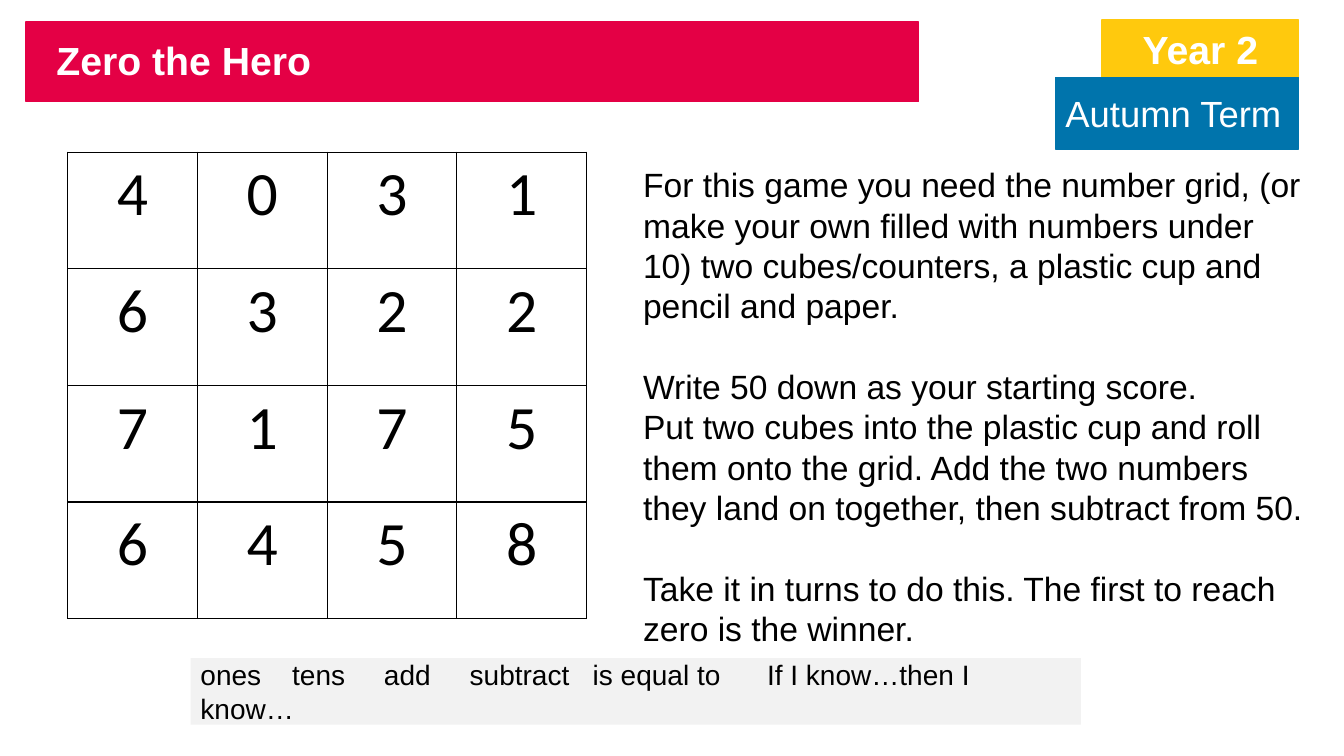
from dataclasses import dataclass
from typing import Optional

from lxml import etree
from pptx import Presentation
from pptx.dml.color import RGBColor
from pptx.enum.shapes import MSO_SHAPE
from pptx.enum.text import MSO_ANCHOR, MSO_AUTO_SIZE, PP_ALIGN
from pptx.oxml.ns import qn
from pptx.util import Inches, Pt

RECTANGLE = MSO_SHAPE.RECTANGLE
TOP, MIDDLE = MSO_ANCHOR.TOP, MSO_ANCHOR.MIDDLE
LEFT, CENTER = PP_ALIGN.LEFT, PP_ALIGN.CENTER
NO_AUTOFIT = MSO_AUTO_SIZE.NONE

RED = RGBColor(0xE4, 0x00, 0x45)
YELLOW = RGBColor(0xFF, 0xC9, 0x0D)
BLUE = RGBColor(0x00, 0x74, 0xAC)
GREY = RGBColor(0xF2, 0xF2, 0xF2)
WHITE = RGBColor(0xFF, 0xFF, 0xFF)
BLACK = RGBColor(0x00, 0x00, 0x00)

SLIDE_WIDTH, SLIDE_HEIGHT = Inches(13.33), Inches(7.5)


@dataclass(frozen=True)
class Area:
    """A place on the slide, in percent of its width and height."""
    left: float
    top: float
    width: float
    height: float

    def box(self) -> tuple[int, int, int, int]:
        return (round(SLIDE_WIDTH * self.left / 100), round(SLIDE_HEIGHT * self.top / 100),
                round(SLIDE_WIDTH * self.width / 100), round(SLIDE_HEIGHT * self.height / 100))


@dataclass(frozen=True)
class Style:
    size: int
    color: RGBColor = BLACK
    bold: bool = False
    align: PP_ALIGN = LEFT
    anchor: MSO_ANCHOR = TOP
    font: str = "Arial"


@dataclass(frozen=True)
class Panel:
    area: Area
    fill: RGBColor
    outlined: bool = True
    text: str = ""
    style: Optional[Style] = None


TITLE_AREA = Area(3.45, 4.13, 21.53, 7.6)
GRID_AREA = Area(5.03, 20.13, 38.63, 61.73)
RULES_AREA = Area(47.11, 21.07, 51.16, 66)

BANNER = Panel(Area(1.95, 2.93, 66.4, 10.53), RED)
VOCABULARY = Panel(Area(14.18, 87.07, 66.24, 8.8), GREY, False,
                   "ones\ttens\tadd\tsubtract\tis equal to\tIf I know…then I know…",
                   Style(20, anchor=MIDDLE))
YEAR = Panel(Area(82, 2.67, 14.63, 7.6), YELLOW, True, "Year 2",
             Style(28, WHITE, bold=True, align=CENTER))
TERM = Panel(Area(78.54, 10.27, 18.08, 9.47), BLUE, True, "Autumn Term",
             Style(26, WHITE, anchor=MIDDLE))

WORD_STOPS = (0.91, 1.82, 2.67, 3.89, 5.62)
NUMBERS = ("4031", "6322", "7175", "6458")

# Each rule with the gap above it in points
RULES = (
    ("For this game you need the number grid, (or make your own filled with numbers "
     "under 10) two cubes/counters, a plastic cup and pencil and paper.", 0),
    ("Write 50 down as your starting score.", 28.8),
    ("Put two cubes into the plastic cup and roll them onto the grid. Add the two "
     "numbers they land on together, then subtract from 50.", 0),
    ("Take it in turns to do this. The first to reach zero is the winner.", 28.8),
)


def write(frame, text: str, style: Style, wrap: bool = True) -> None:
    for name, value in {"text": text, "word_wrap": wrap, "auto_size": NO_AUTOFIT,
                        "vertical_anchor": style.anchor}.items():
        setattr(frame, name, value)
    for paragraph in frame.paragraphs:
        format_paragraph(paragraph, style)


def format_paragraph(paragraph, style: Style) -> None:
    paragraph.alignment = style.align
    for run in paragraph.runs:
        for name, value in {"name": style.font, "size": Pt(style.size),
                            "bold": style.bold}.items():
            setattr(run.font, name, value)
        run.font.color.rgb = style.color


def draw_panel(slide, panel: Panel):
    shape = slide.shapes.add_shape(RECTANGLE, *panel.area.box())
    shape.shadow.inherit = False
    shape.fill.solid()
    shape.fill.fore_color.rgb = panel.fill
    if panel.outlined:
        shape.line.color.rgb = panel.fill
        shape.line.width = Pt(1)
    else:
        shape.line.fill.background()
    if panel.style:
        write(shape.text_frame, panel.text, panel.style)
    return shape


def draw_title(slide) -> None:
    title = slide.shapes.title
    for name, value in zip(("left", "top", "width", "height"), TITLE_AREA.box()):
        setattr(title, name, value)
    write(title.text_frame, "Zero the Hero", Style(28, WHITE, bold=True), wrap=False)
    # Bring the title in front of its banner
    title.element.getparent().append(title.element)


def draw_vocabulary(slide) -> None:
    frame = draw_panel(slide, VOCABULARY).text_frame
    frame.margin_right = Inches(0.2)
    properties = frame.paragraphs[0]._p.get_or_add_pPr()
    stops = etree.SubElement(properties, qn("a:tabLst"))
    for stop in WORD_STOPS:
        etree.SubElement(stops, qn("a:tab"), pos=str(Inches(stop)), algn="l")


def border_cell(cell) -> None:
    properties = cell._tc.get_or_add_tcPr()
    for position, side in enumerate(("a:lnL", "a:lnR", "a:lnT", "a:lnB")):
        line = etree.Element(qn(side), w=str(Pt(1)))
        fill = etree.SubElement(line, qn("a:solidFill"))
        etree.SubElement(fill, qn("a:srgbClr"), val=str(BLACK))
        properties.insert(position, line)


def draw_number_grid(slide) -> None:
    rows, columns = len(NUMBERS), len(NUMBERS[0])
    left, top, width, height = GRID_AREA.box()
    table = slide.shapes.add_table(rows, columns, left, top, width, height).table
    table.first_row = table.horz_banding = False
    for column in table.columns:
        column.width = width // columns
    for row, digits in zip(table.rows, NUMBERS):
        row.height = height // rows
        for cell, digit in zip(row.cells, digits):
            cell.text = digit
            cell.vertical_anchor = TOP
            cell.fill.background()
            format_paragraph(cell.text_frame.paragraphs[0],
                             Style(44, align=CENTER, font="Calibri"))
            border_cell(cell)


def draw_rules(slide) -> None:
    frame = slide.shapes.add_textbox(*RULES_AREA.box()).text_frame
    write(frame, "\n".join(text for text, _ in RULES), Style(24))
    for paragraph, (_, gap) in zip(frame.paragraphs, RULES):
        paragraph.space_before = Pt(gap)


def main() -> None:
    presentation = Presentation()
    presentation.slide_width, presentation.slide_height = SLIDE_WIDTH, SLIDE_HEIGHT
    slide = presentation.slides.add_slide(presentation.slide_layouts[5])

    # Heading
    draw_panel(slide, BANNER)
    draw_title(slide)

    # Game and its words
    draw_vocabulary(slide)
    draw_number_grid(slide)
    draw_rules(slide)

    # Year and term labels
    for label in (YEAR, TERM):
        draw_panel(slide, label)

    presentation.save("out.pptx")


if __name__ == "__main__":
    main()
